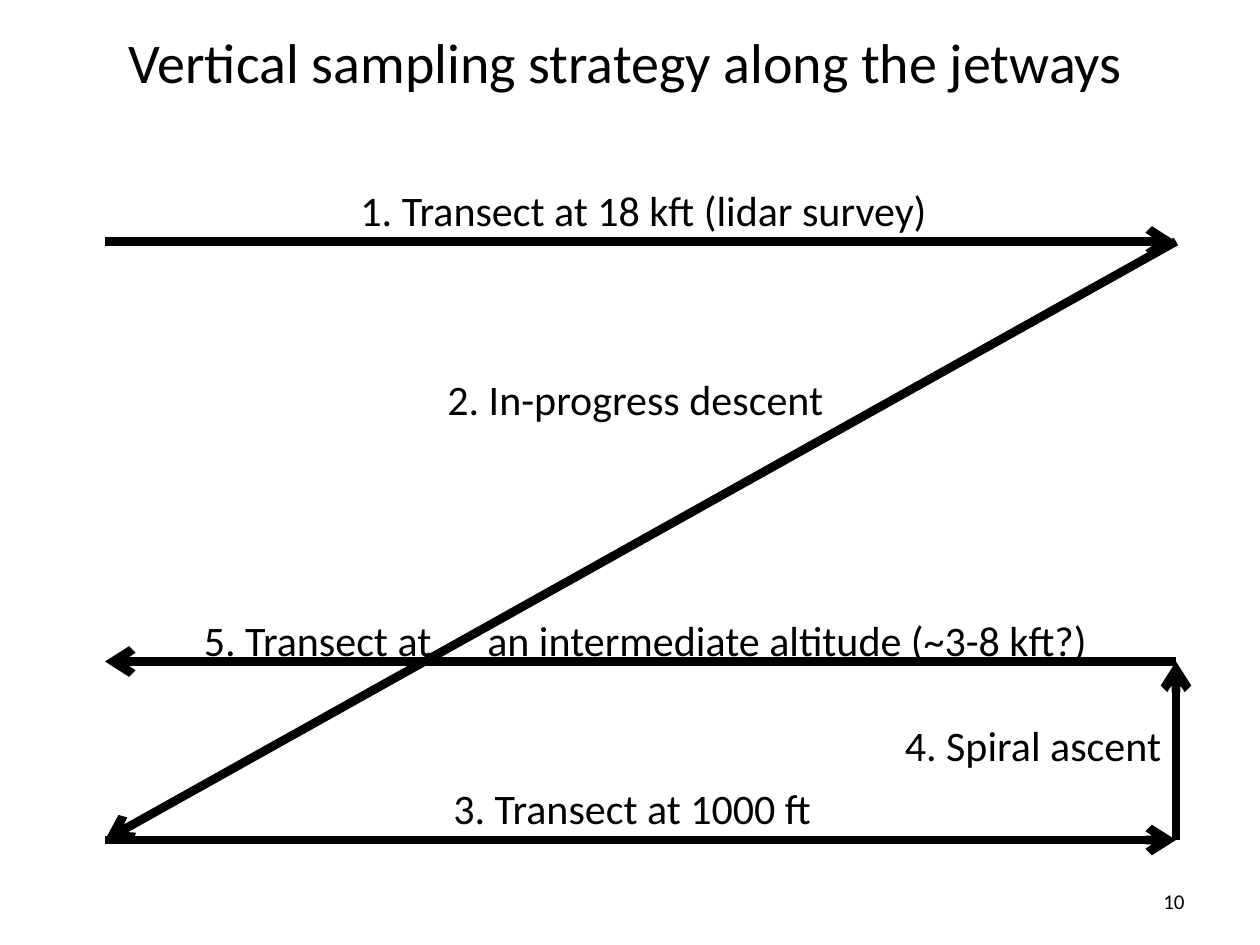
"""Build the slide on the vertical sampling strategy along the jetways."""
from lxml import etree
from pptx import Presentation
from pptx.dml.color import RGBColor
from pptx.enum import shapes, text
from pptx.oxml import ns
from pptx.util import Pt

BLACK = RGBColor(0, 0, 0)
WEST, EAST = 60, 672
HIGH, MIDDLE, LOW = 138, 378, 480
TAB_STOP = 162

FLIGHT_LEGS = [
    ((WEST, HIGH), (EAST, HIGH)),
    ((EAST, HIGH), (WEST, LOW)),
    ((WEST, LOW), (EAST, LOW)),
    ((EAST, LOW), (EAST, MIDDLE)),
    ((EAST, MIDDLE), (WEST, MIDDLE)),
]

LEFT, RIGHT = text.PP_ALIGN.LEFT, text.PP_ALIGN.RIGHT
TOP, CENTRE = text.MSO_ANCHOR.TOP, text.MSO_ANCHOR.MIDDLE

TEXTS = [
    ("Vertical sampling strategy along the jetways", (66.4, 12.4, 590, 46), 32, LEFT, TOP),
    ("1. Transect at 18 kft (lidar survey)", (198.9, 101.8, 343, 36), 24, LEFT, TOP),
    ("2. In-progress descent", (248.6, 210, 233, 36), 24, LEFT, TOP),
    ("3. Transect at 1000 ft", (252, 443.6, 223, 36), 24, LEFT, TOP),
    ("4. Spiral ascent", (510, 407.6, 164, 36), 24, LEFT, TOP),
    ("5. Transect at\tan intermediate altitude (~3-8 kft?)", (109.4, 347.6, 536, 36), 24, LEFT, TOP),
    ("10", (516, 500.5, 168, 28.8), 12, RIGHT, CENTRE),
]


def add_leg(page, start, end):
    leg = page.shapes.add_connector(
        shapes.MSO_CONNECTOR.STRAIGHT, *(Pt(value) for value in start + end))
    leg.line.color.rgb = BLACK
    leg.line.width = Pt(5)
    etree.SubElement(leg.line._get_or_add_ln(), ns.qn("a:tailEnd"), type="arrow")
    etree.SubElement(leg._element.spPr, ns.qn("a:effectLst"))


def add_text(page, words, place, size, align, anchor):
    box = page.shapes.add_textbox(*(Pt(value) for value in place))
    frame = box.text_frame
    frame.word_wrap = True
    frame.vertical_anchor = anchor
    para = frame.paragraphs[0]
    para.text = words
    para.alignment = align
    if "\t" in words:
        tabs = etree.SubElement(para._p.get_or_add_pPr(), ns.qn("a:tabLst"))
        etree.SubElement(tabs, ns.qn("a:tab"), pos=str(Pt(TAB_STOP)), algn="l")
    for span in para.runs:
        for name, value in {"name": "Calibri", "size": Pt(size)}.items():
            setattr(span.font, name, value)
        span.font.color.rgb = BLACK


def main():
    deck = Presentation()
    deck.slide_width, deck.slide_height = Pt(720), Pt(540)
    page = deck.slides.add_slide(deck.slide_layouts[6])
    for start, end in FLIGHT_LEGS:
        add_leg(page, start, end)
    for entry in TEXTS:
        add_text(page, *entry)
    deck.save("out.pptx")


if __name__ == "__main__":
    main()
